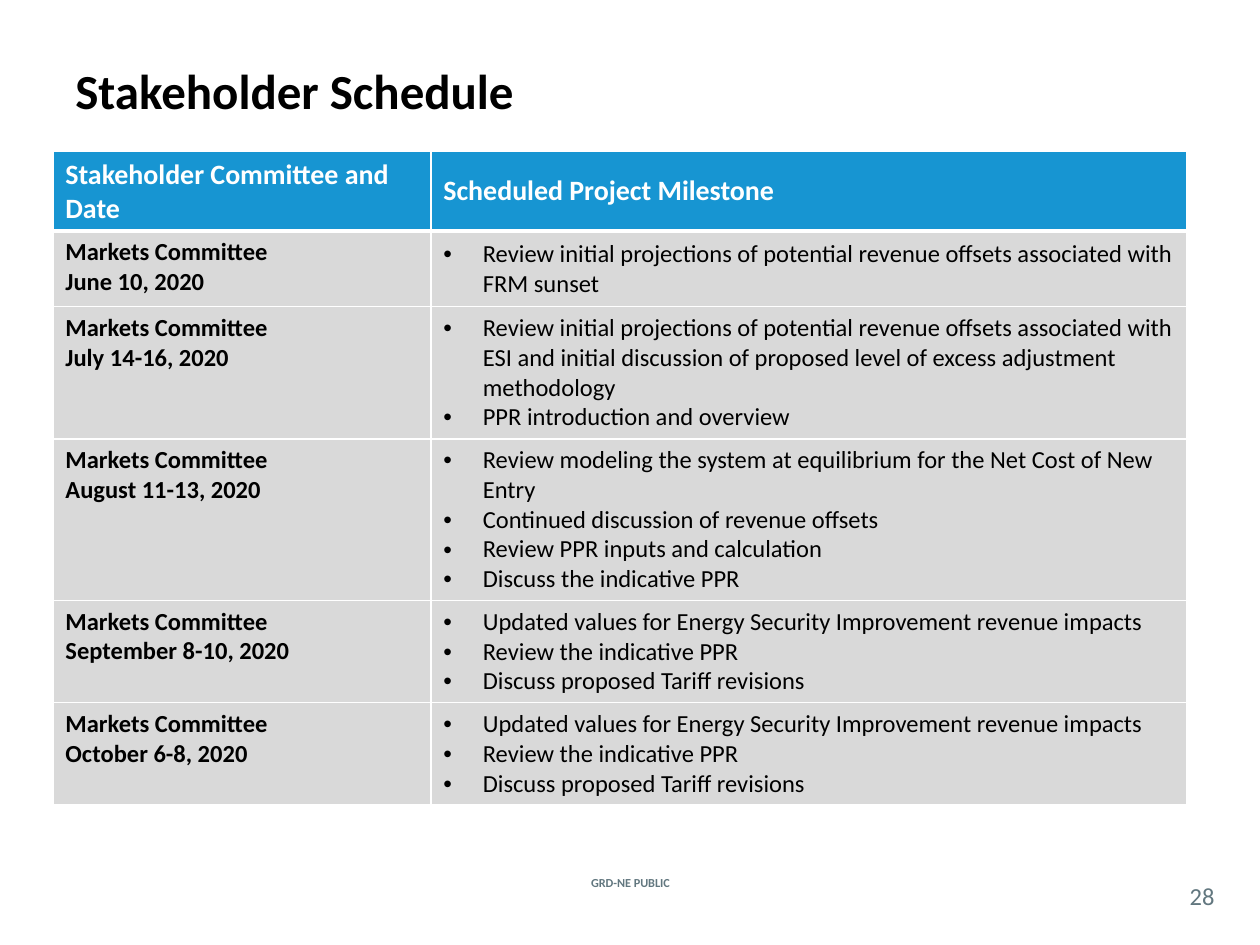
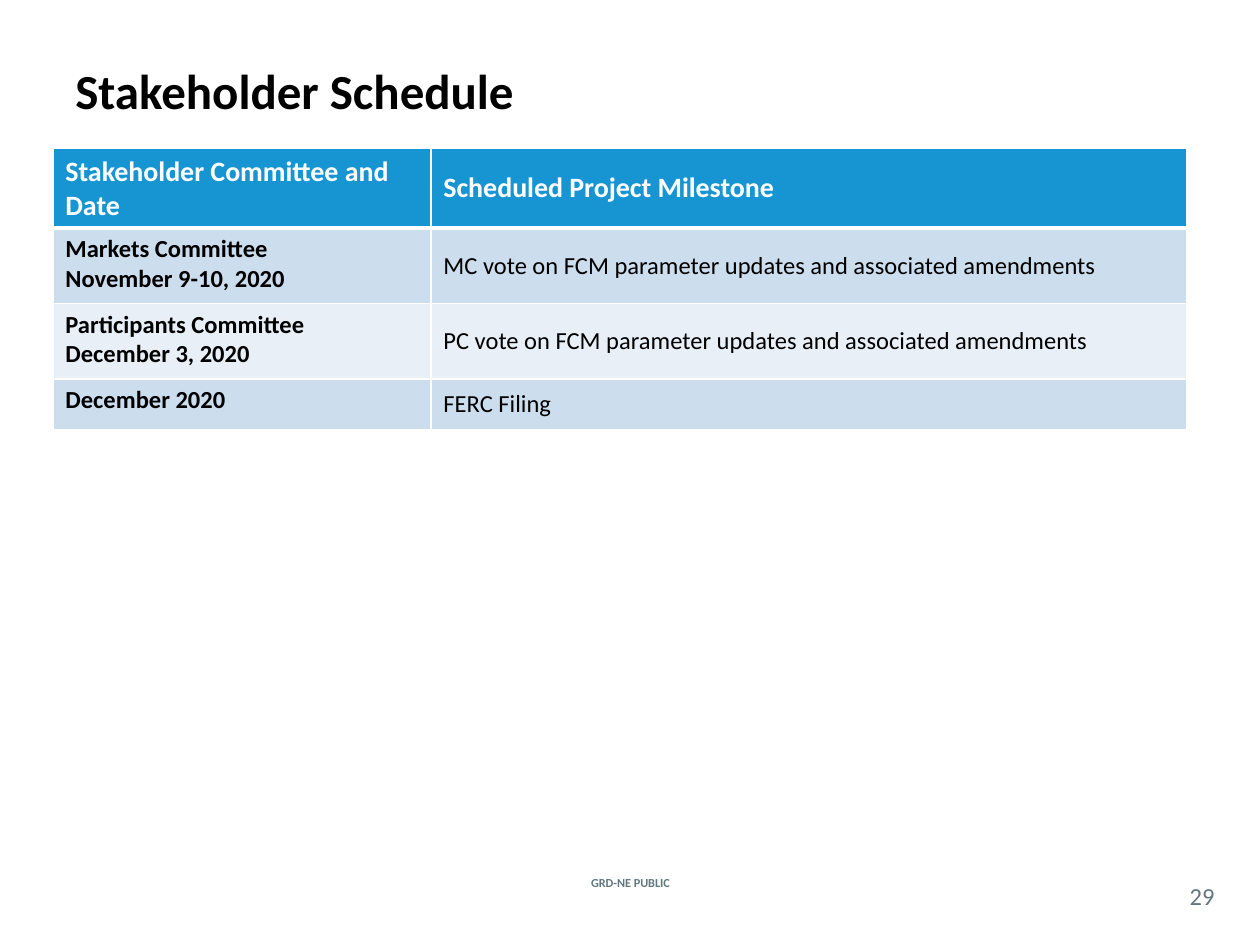
from lxml import etree
from pptx import Presentation
from pptx.dml.color import RGBColor
from pptx.enum import text
from pptx.oxml import ns
from pptx.util import Pt

FONT = "Calibri"
BLACK = RGBColor(0x00, 0x00, 0x00)
WHITE = RGBColor(0xFF, 0xFF, 0xFF)
SLATE = RGBColor(0x62, 0x77, 0x7F)
HEADER_BLUE = RGBColor(0x17, 0x95, 0xD2)
GREY = RGBColor(0xD9, 0xD9, 0xD9)
BAND_DARK = RGBColor(0xCC, 0xDD, 0xEE)
BAND_LIGHT = RGBColor(0xE8, 0xEF, 0xF7)

TITLE = "Stakeholder Schedule"
FOOTER = "GRD-NE PUBLIC"
HEADINGS = ("Stakeholder Committee and Date", "Scheduled Project Milestone")
COLUMN_WIDTHS = (216, 432)
HEADER_HEIGHT = 44
BULLET_INDENT = 22.5

FINAL_REVIEW = [
    "Updated values for Energy Security Improvement revenue impacts",
    "Review the indicative PPR",
    "Discuss proposed Tariff revisions",
]
SUMMER_MEETINGS = [
    (43.2, "Markets Committee\nJune 10, 2020", [
        "Review initial projections of potential revenue offsets associated with FRM sunset",
    ]),
    (75.6, "Markets Committee\nJuly 14-16, 2020", [
        "Review initial projections of potential revenue offsets associated with ESI "
        "and initial discussion of proposed level of excess adjustment methodology",
        "PPR introduction and overview",
    ]),
    (92.4, "Markets Committee\nAugust 11-13, 2020", [
        "Review modeling the system at equilibrium for the Net Cost of New Entry",
        "Continued discussion of revenue offsets",
        "Review PPR inputs and calculation",
        "Discuss the indicative PPR",
    ]),
    (58.4, "Markets Committee\nSeptember 8-10, 2020", FINAL_REVIEW),
    (58.4, "Markets Committee\nOctober 6-8, 2020", FINAL_REVIEW),
]
VOTES = [
    (43.2, "Markets Committee\nNovember 9-10, 2020",
     ["MC vote on FCM parameter updates and associated amendments"]),
    (43.2, "Participants Committee\nDecember 3, 2020",
     ["PC vote on FCM parameter updates and associated amendments"]),
    (28.8, "December 2020", ["FERC Filing"]),
]


def format_text(text_frame, size, color, bold=False, align=text.PP_ALIGN.LEFT):
    for paragraph in text_frame.paragraphs:
        paragraph.alignment = align
        for run in paragraph.runs:
            run.font.name = FONT
            run.font.size = Pt(size)
            run.font.bold = bold
            run.font.color.rgb = color


def add_label(slide, box, words, size, color, inset=(7.2, 3.6), **style):
    shape = slide.shapes.add_textbox(*map(Pt, box))
    frame = shape.text_frame
    frame.word_wrap = True
    frame.vertical_anchor = text.MSO_ANCHOR.MIDDLE
    frame.margin_left = frame.margin_right = Pt(inset[0])
    frame.margin_top = frame.margin_bottom = Pt(inset[1])
    frame.text = words
    format_text(frame, size, color, **style)


def add_frame(slide, number):
    center = text.PP_ALIGN.CENTER
    add_label(slide, (307.4, 498.2, 105.8, 12.2), FOOTER, 7, SLATE, bold=True, align=center)
    add_label(slide, (36, 30.2, 648, 41.8), TITLE, 28, BLACK, bold=True)
    add_label(slide, (671.8, 501.1, 30.2, 20.9), str(number), 14, SLATE,
              inset=(0, 0), align=center)


def add_bullet(paragraph):
    properties = paragraph._p.get_or_add_pPr()
    properties.set("marL", str(Pt(BULLET_INDENT)))
    properties.set("indent", str(-Pt(BULLET_INDENT)))
    etree.SubElement(properties, ns.qn("a:buFont"), typeface="Arial")
    etree.SubElement(properties, ns.qn("a:buChar"), char="•")


def set_borders(cell, top, bottom):
    properties = cell._tc.get_or_add_tcPr()
    for side, width in (("L", 1), ("R", 1), ("T", top), ("B", bottom)):
        line = etree.SubElement(properties, ns.qn(f"a:ln{side}"), w=str(Pt(width)))
        fill = etree.SubElement(line, ns.qn("a:solidFill"))
        etree.SubElement(fill, ns.qn("a:srgbClr"), val=str(WHITE))


def fill_cell(cell, words, fill, size, color, bold, middle, borders, bulleted=False):
    set_borders(cell, *borders)
    cell.fill.solid()
    cell.fill.fore_color.rgb = fill
    cell.vertical_anchor = text.MSO_ANCHOR.MIDDLE if middle else text.MSO_ANCHOR.TOP
    cell.text_frame.text = words
    if bulleted:
        for paragraph in cell.text_frame.paragraphs:
            add_bullet(paragraph)
    format_text(cell.text_frame, size, color, bold)


def add_schedule(slide, left, top, meetings, bands, bulleted):
    heights = [HEADER_HEIGHT] + [meeting[0] for meeting in meetings]
    table = slide.shapes.add_table(
        len(heights), len(COLUMN_WIDTHS), Pt(left), Pt(top),
        Pt(sum(COLUMN_WIDTHS)), Pt(sum(heights))).table
    for column, width in zip(table.columns, COLUMN_WIDTHS):
        column.width = Pt(width)
    for row, height in zip(table.rows, heights):
        row.height = Pt(height)
    for column, heading in enumerate(HEADINGS):
        fill_cell(table.cell(0, column), heading, HEADER_BLUE, 16, WHITE, True, True, (1, 3))
    for row, (_, committee, milestones) in enumerate(meetings, 1):
        fill = bands[(row - 1) % len(bands)]
        borders = (3 if row == 1 else 1, 1)
        fill_cell(table.cell(row, 0), committee, fill, 14, BLACK, True, False, borders)
        fill_cell(table.cell(row, 1), "\n".join(milestones), fill, 14, BLACK, False, True,
                  borders, bulleted)


def main():
    presentation = Presentation()
    presentation.slide_width, presentation.slide_height = Pt(720), Pt(540)
    schedules = [
        (86.4, SUMMER_MEETINGS, (GREY,), True),
        (84.6, VOTES, (BAND_DARK, BAND_LIGHT), False),
    ]
    for number, (top, meetings, bands, bulleted) in enumerate(schedules, 28):
        slide = presentation.slides.add_slide(presentation.slide_layouts[6])
        add_frame(slide, number)
        add_schedule(slide, 30.2, top, meetings, bands, bulleted)
    presentation.save("out.pptx")


if __name__ == "__main__":
    main()
